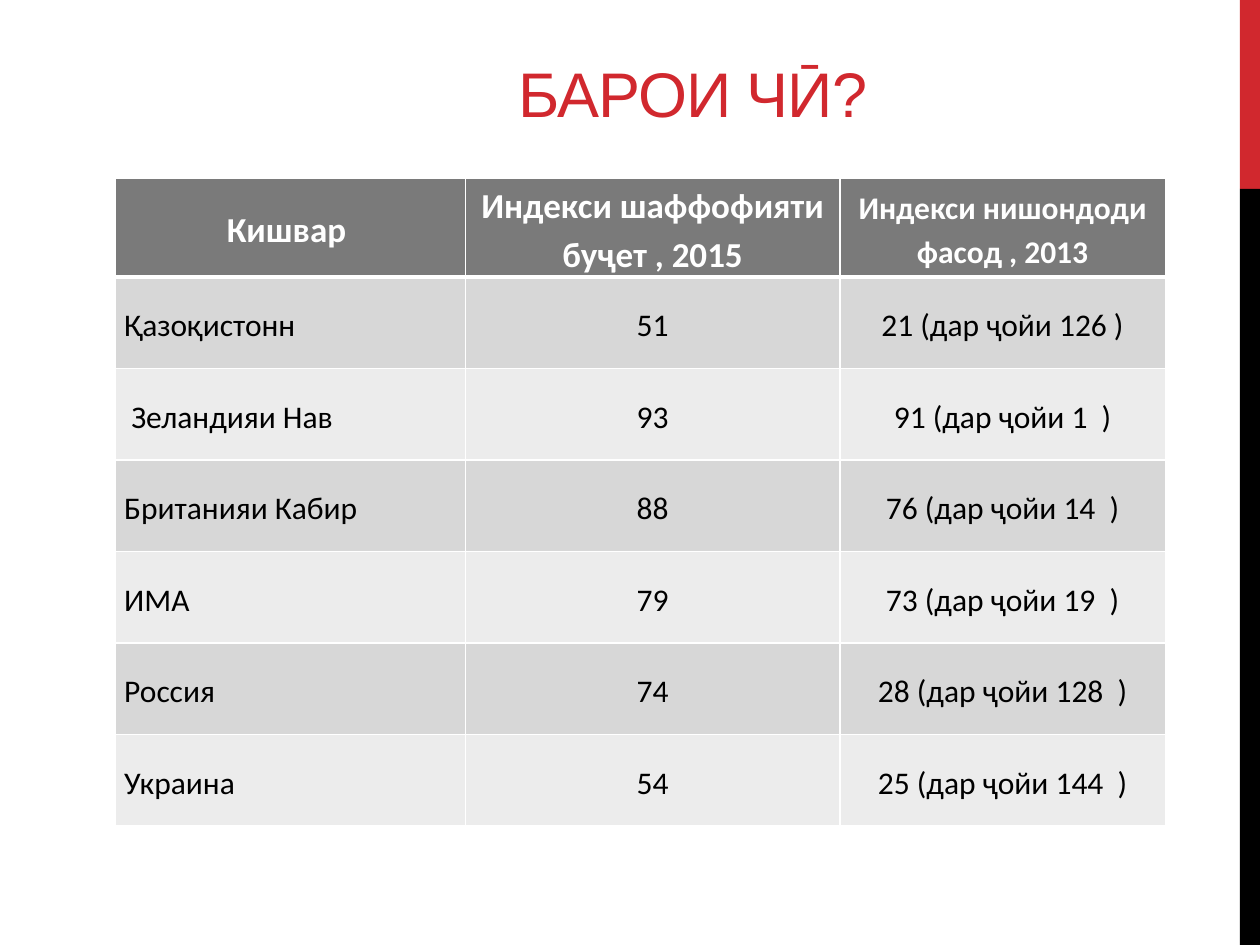
"""Build the slide comparing budget openness and corruption indices by country."""
from lxml.etree import SubElement
from pptx import Presentation
from pptx.dml.color import RGBColor
from pptx.enum.shapes import MSO_SHAPE
from pptx.enum.text import MSO_ANCHOR as Anchor, MSO_AUTO_SIZE as AutoSize, PP_ALIGN as Align
from pptx.oxml import parse_xml
from pptx.oxml.ns import nsdecls, qn
from pptx.util import Pt

RED, BLACK, WHITE = "D1282E", "000000", "FFFFFF"
HEADER_GREY, BANDS = "7A7A7A", ("D7D7D7", "ECECEC")


def paint(fill, color):
    fill.solid()
    fill.fore_color.rgb = RGBColor.from_string(color)


def write(frame, text, size=20, font="Calibri", color=BLACK, bold=False,
          align=Align.CENTER, spacing=1.15, tracking=None):
    paragraph = frame.paragraphs[0]
    paragraph.alignment = align
    paragraph.line_spacing = spacing
    run = paragraph.add_run()
    run.text = text
    run.font.size, run.font.name, run.font.bold = Pt(size), font, bold
    paint(run.font.fill, color)
    if tracking is not None:
        run.font._element.set("spc", str(tracking))


prs = Presentation()
prs.slide_width, prs.slide_height = Pt(720), Pt(540)
slide = prs.slides.add_slide(prs.slide_layouts[5])
paint(slide.background.fill, WHITE)

for top, height, color in ((0, 108, RED), (108, 432, BLACK)):
    side_bar = slide.shapes.add_shape(MSO_SHAPE.RECTANGLE, Pt(708.5), Pt(top), Pt(11.5), Pt(height))
    side_bar.shadow.inherit = False
    paint(side_bar.fill, color)
    side_bar.line.fill.background()

title = slide.shapes.title
title.left, title.top, title.width, title.height = Pt(168), Pt(18), Pt(456), Pt(60)
title.text_frame.auto_size = AutoSize.NONE
title.text_frame.vertical_anchor = Anchor.BOTTOM
write(title.text_frame, "БАРОИ ЧӢ?", size=36, font="Arial", color=RED, spacing=1, tracking=-60)

headings = ("Кишвар ", "Индекси шаффофияти буҷет , 2015", "Индекси нишондоди фасод , 2013")
countries = (
    ("Қазоқистонн", "51", "21 (дар ҷойи 126 )"),
    (" Зеландияи Нав", "93", "91 (дар ҷойи 1  )"),
    ("Британияи Кабир", "88", "76 (дар ҷойи 14  )"),
    ("ИМА", "79", "73 (дар ҷойи 19  )"),
    ("Россия", "74", "28 (дар ҷойи 128  )"),
    ("Украина", "54", "25 (дар ҷойи 144  )"),
)
rows = (headings, *countries)
column_widths = (200, 214, 186)
row_height = 52.3
indices = slide.shapes.add_table(len(rows), len(headings), Pt(66), Pt(102),
                                 Pt(sum(column_widths)), Pt(row_height * len(rows))).table
for column, width in zip(indices.columns, column_widths):
    column.width = Pt(width)

for r, row in enumerate(rows):
    indices.rows[r].height = Pt(row_height)
    is_header = r == 0
    for c, text in enumerate(row):
        cell = indices.cell(r, c)
        cell.vertical_anchor = Anchor.MIDDLE
        cell.margin_left = cell.margin_right = Pt(5)
        cell.margin_top = cell.margin_bottom = 0
        write(cell.text_frame, text, size=20 if is_header and c < 2 else 18,
              color=WHITE if is_header else BLACK, bold=is_header,
              align=Align.LEFT if c == 0 and not is_header else Align.CENTER)
        cell_props = cell._tc.get_or_add_tcPr()
        for side in "LRTB":
            under_header = (r, side) in ((0, "B"), (1, "T"))
            border = SubElement(cell_props, qn(f"a:ln{side}"), w=str(Pt(3 if under_header else 1)))
            border.append(parse_xml(
                f'<a:solidFill {nsdecls("a")}><a:srgbClr val="{WHITE}"/></a:solidFill>'))
        paint(cell.fill, HEADER_GREY if is_header else BANDS[(r - 1) % 2])

prs.save("out.pptx")
